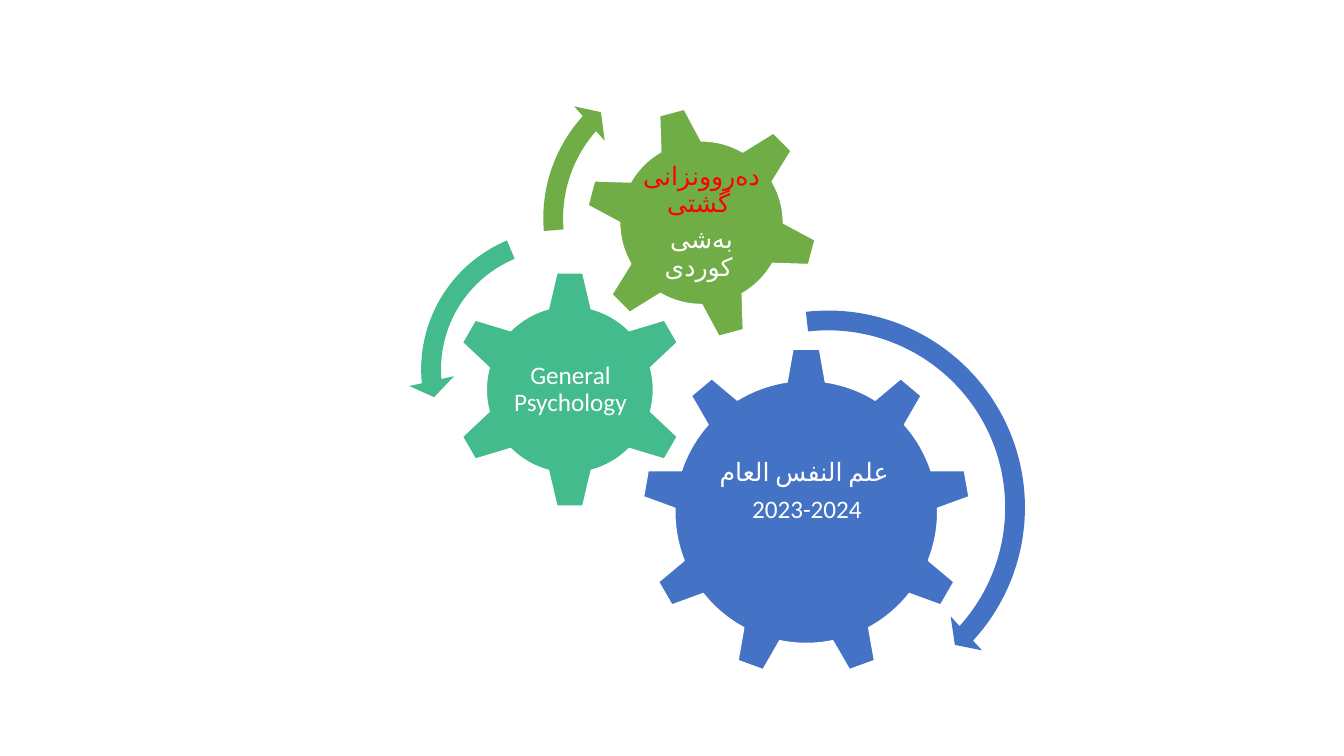
from lxml.etree import SubElement
from pptx import Presentation
from pptx.dml.color import RGBColor
from pptx.enum.lang import MSO_LANGUAGE_ID
from pptx.enum.shapes import MSO_SHAPE
from pptx.enum.text import MSO_ANCHOR, PP_ALIGN
from pptx.oxml.ns import qn
from pptx.util import Pt

COLORS = {
    "blue": "4472C4",
    "teal": "43BB8D",
    "green": "70AD47",
    "white": "FFFFFF",
    "red": "FF0000",
}
FONT = "Calibri"
ARABIC = MSO_LANGUAGE_ID.ARABIC_IRAQ
ENGLISH = MSO_LANGUAGE_ID.ENGLISH_US
INSET = 2

# kind, left, top, size, rotation, color
GEARS = [
    (MSO_SHAPE.GEAR_9, 458.6, 248.4, 234.7, 0, "blue"),
    (MSO_SHAPE.GEAR_6, 321.8, 193, 170.6, 0, "teal"),
    (MSO_SHAPE.GEAR_6, 417.6, 75.6, 167, 345, "green"),
]

# left, top, width, height, bottom inset, lines of (text, language, color)
LABELS = [
    (506.2, 303.8, 140.4, 121, 28,
     [("علم النفس العام ", ARABIC, "white"), ("2023-2024", ENGLISH, "white")]),
    (365, 236.2, 85, 84.2, INSET, [("General Psychology", ENGLISH, "white")]),
    (454.3, 112.3, 93.6, 93.6, INSET,
     [("دەروونزانی گشتی ", ARABIC, "red"), ("بەشی كوردی ", ARABIC, "white")]),
]

# kind, left, top, size, adjustments, color
ARROWS = [
    (MSO_SHAPE.CIRCULAR_ARROW, 441.4, 212.4, 300.2,
     (0.047, 2.99, 25.393, 158.123, 0.055), "blue"),
    (MSO_SHAPE.LEFT_CIRCULAR_ARROW, 291.6, 154.8, 218.2,
     (0.065, 4.3, 104.891, 148.378, 0.075), "teal"),
    (MSO_SHAPE.CIRCULAR_ARROW, 378.7, 38.2, 235.4,
     (0.06, 3.941, 133.138, 105.082, 0.07), "green"),
]


def rgb(name):
    return RGBColor.from_string(COLORS[name])


def add_square_shape(kind, left, top, size, color):
    shape = page.shapes.add_shape(kind, Pt(left), Pt(top), Pt(size), Pt(size))
    shape.shadow.inherit = False
    shape.fill.solid()
    shape.fill.fore_color.rgb = rgb(color)
    return shape


deck = Presentation()
deck.slide_width, deck.slide_height = Pt(960), Pt(540)
page = deck.slides.add_slide(deck.slide_layouts[6])

for kind, left, top, size, rotation, color in GEARS:
    gear = add_square_shape(kind, left, top, size, color)
    gear.rotation = rotation
    gear.line.color.rgb = rgb("white")
    gear.line.width = Pt(1)

for left, top, width, height, bottom, lines in LABELS:
    box = page.shapes.add_textbox(Pt(left), Pt(top), Pt(width), Pt(height))
    frame = box.text_frame
    frame.word_wrap = True
    frame.vertical_anchor = MSO_ANCHOR.MIDDLE
    frame.margin_left = frame.margin_right = frame.margin_top = Pt(INSET)
    frame.margin_bottom = Pt(bottom)
    for number, (text, language, color) in enumerate(lines):
        para = frame.add_paragraph() if number else frame.paragraphs[0]
        para.alignment = PP_ALIGN.CENTER
        para.line_spacing = 0.9
        para.space_after = Pt(6.3)
        span = para.add_run()
        span.text = text
        span.font.name = FONT
        span.font.size = Pt(18)
        span.font.color.rgb = rgb(color)
        span.font.language_id = language
        # Arabic script takes its typeface from a:cs
        SubElement(span.font._element, qn("a:cs"), typeface=FONT)

for kind, left, top, size, adjustments, color in ARROWS:
    arrow = add_square_shape(kind, left, top, size, color)
    arrow.line.fill.background()
    for index, value in enumerate(adjustments):
        arrow.adjustments[index] = value

deck.save("out.pptx")
